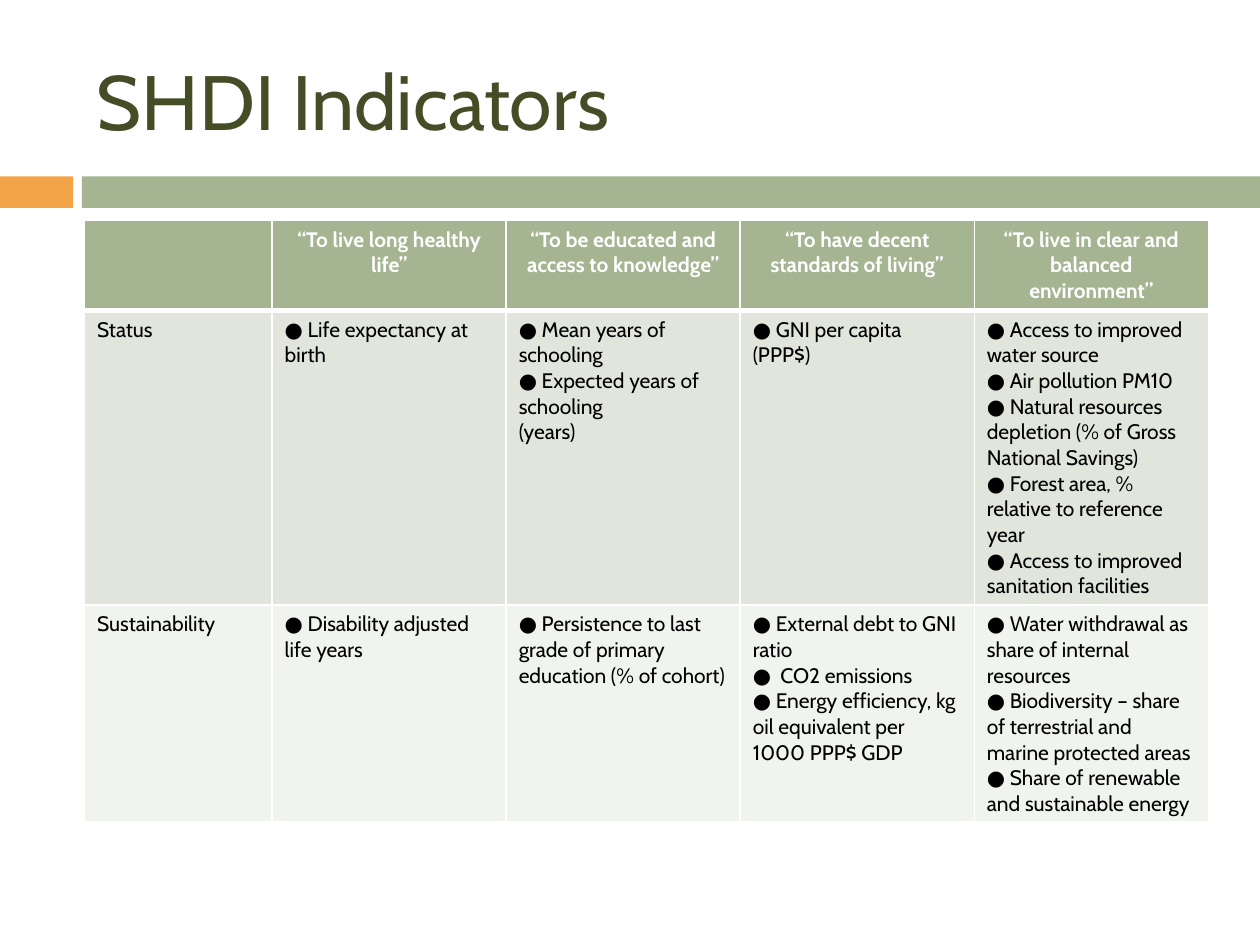
from dataclasses import dataclass

from lxml import etree
from pptx import Presentation
from pptx.dml.color import RGBColor
from pptx.enum.shapes import MSO_SHAPE
from pptx.enum.text import MSO_ANCHOR, PP_ALIGN
from pptx.oxml.ns import qn
from pptx.util import Inches, Pt

RECTANGLE = MSO_SHAPE.RECTANGLE
MIDDLE = MSO_ANCHOR.MIDDLE
LEFT, CENTER = PP_ALIGN.LEFT, PP_ALIGN.CENTER
BLANK_LAYOUT = 6


@dataclass(frozen=True)
class Theme:
    font: str = "Cabin"
    title_size: int = 44
    table_size: int = 12
    title: str = "444D26"
    accent: str = "F3A447"
    green: str = "A5B592"
    white: str = "FFFFFF"
    black: str = "000000"
    row_fills: tuple = ("E1E5DC", "F0F3EE")


THEME = Theme()

HEADINGS = [
    "",
    "“To live long healthy life”",
    "“To be educated and access to knowledge”",
    "“To have decent standards of living”",
    "“To live in clear and balanced environment”",
]
# Each cell is a list of paragraphs.
INDICATORS = [
    [
        ["Status"],
        ["● Life expectancy at birth"],
        ["● Mean years of schooling", "● Expected years of schooling", "(years)"],
        ["● GNI per capita (PPP$)"],
        [
            "● Access to improved water source",
            "● Air pollution PM10",
            "● Natural resources depletion (% of Gross National Savings)",
            "● Forest area, % relative to reference year",
            "● Access to improved sanitation facilities",
        ],
    ],
    [
        ["Sustainability"],
        ["● Disability adjusted life years"],
        ["● Persistence to last grade of primary education (% of cohort)"],
        [
            "● External debt to GNI ratio",
            "●  CO2 emissions",
            "● Energy efficiency, kg oil equivalent per 1000 PPP$ GDP",
        ],
        [
            "● Water withdrawal as share of internal resources",
            "● Biodiversity – share of terrestrial and marine protected areas",
            "● Share of renewable and sustainable energy",
        ],
    ],
]


def write_text(frame, paragraphs, *, size, color, bold=False, align=LEFT):
    frame.word_wrap = True
    for index, wording in enumerate(paragraphs):
        paragraph = frame.add_paragraph() if index else frame.paragraphs[0]
        paragraph.alignment = align
        font = paragraph.font
        if wording:
            run = paragraph.add_run()
            run.text = wording
            font = run.font
        font.name = THEME.font
        font.size = Pt(size)
        font.bold = bold
        font.color.rgb = RGBColor.from_string(color)


def set_borders(cell, color, bottom_width):
    """Draw 1 pt sides and top, with a bottom edge of the given width."""
    properties = cell._tc.get_or_add_tcPr()
    edges = [("a:lnL", 1), ("a:lnR", 1), ("a:lnT", 1), ("a:lnB", bottom_width)]
    for position, (tag, width) in enumerate(edges):
        line = etree.Element(qn(tag), w=str(Pt(width)))
        fill = etree.SubElement(line, qn("a:solidFill"))
        etree.SubElement(fill, qn("a:srgbClr"), val=color)
        properties.insert(position, line)


def fill_cell(cell, paragraphs, fill, bottom_width=1, **text_format):
    cell.fill.solid()
    cell.fill.fore_color.rgb = RGBColor.from_string(fill)
    set_borders(cell, THEME.white, bottom_width)
    write_text(cell.text_frame, paragraphs, size=THEME.table_size, **text_format)


def add_divider(slide, left, top, width, height):
    """Place a short accent block and a long green bar, with a gap between."""
    accent_width, gap = Inches(0.58), Inches(0.07)
    bar_offset = accent_width + gap
    for offset, part_width, color in (
        (0, accent_width, THEME.accent),
        (bar_offset, width - bar_offset, THEME.green),
    ):
        bar = slide.shapes.add_shape(RECTANGLE, left + offset, top, part_width, height)
        bar.shadow.inherit = False
        bar.fill.solid()
        bar.fill.fore_color.rgb = RGBColor.from_string(color)
        bar.line.fill.background()


def add_title(slide, left, top, width, height):
    frame = slide.shapes.add_textbox(left, top, width, height).text_frame
    frame.vertical_anchor = MIDDLE
    write_text(frame, ["SHDI Indicators"], size=THEME.title_size, color=THEME.title)


def add_indicator_table(slide, left, top, width, height):
    row_shares = (0.15, 0.49, 0.36)
    label_width = Inches(1.49)
    table = slide.shapes.add_table(
        len(row_shares), len(HEADINGS), left, top, width, height
    ).table
    for row, share in zip(table.rows, row_shares):
        row.height = int(height * share)
    for index, column in enumerate(table.columns):
        indicator_width = (width - label_width) // (len(HEADINGS) - 1)
        column.width = indicator_width if index else label_width

    for column, heading in enumerate(HEADINGS):
        fill_cell(table.cell(0, column), [heading], THEME.green, bottom_width=3,
                  color=THEME.white, bold=True, align=CENTER)
    for row, (cells, fill) in enumerate(zip(INDICATORS, THEME.row_fills), start=1):
        for column, paragraphs in enumerate(cells):
            cell = table.cell(row, column)
            fill_cell(cell, paragraphs, fill, color=THEME.black)
            if row == 1:
                top_edge = cell._tc.tcPr.find(qn("a:lnT"))
                top_edge.set("w", str(Pt(3)))


def main():
    presentation = Presentation()
    presentation.slide_width = Inches(10)
    presentation.slide_height = Inches(7.5)
    slide = presentation.slides.add_slide(presentation.slide_layouts[BLANK_LAYOUT])

    content_left, content_width = Inches(0.67), Inches(8.92)
    add_divider(slide, 0, Inches(1.4), presentation.slide_width, Inches(0.25))
    add_title(slide, content_left, Inches(0.25), content_width, Inches(1.08))
    add_indicator_table(slide, content_left, Inches(1.75), content_width, Inches(4.77))
    presentation.save("out.pptx")


if __name__ == "__main__":
    main()
